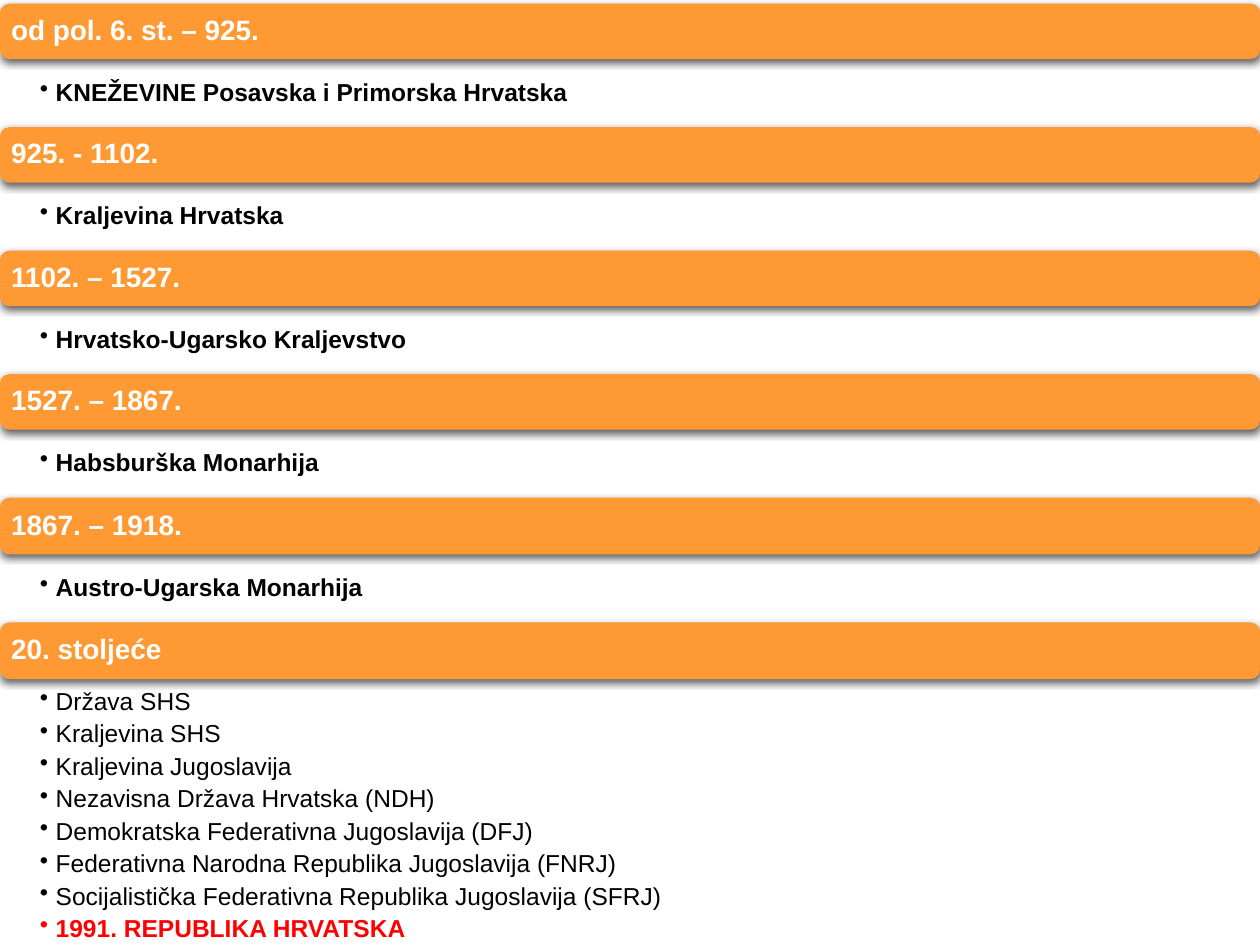
from lxml import etree
from pptx import Presentation
from pptx.dml.color import RGBColor
from pptx.enum.shapes import MSO_SHAPE
from pptx.enum.text import MSO_ANCHOR, PP_ALIGN
from pptx.oxml import parse_xml
from pptx.oxml.ns import nsdecls, qn
from pptx.util import Pt

ROUNDED = MSO_SHAPE.ROUNDED_RECTANGLE
MIDDLE = MSO_ANCHOR.MIDDLE
LEFT = PP_ALIGN.LEFT

ORANGE = RGBColor(0xFF, 0x99, 0x33)
WHITE = RGBColor(0xFF, 0xFF, 0xFF)
BLACK = RGBColor(0x00, 0x00, 0x00)
RED = RGBColor(0xFF, 0x00, 0x00)

WIDTH, HEIGHT = 720, 540
TOP = 2.16
DETAIL_HEIGHT = 38.88
CENTURY_HEIGHT = 149.04

SHADOW = (
    f'<a:effectLst {nsdecls("a")}>'
    '<a:outerShdw blurRad="57150" dist="19050" dir="5400000" algn="ctr" rotWithShape="0">'
    '<a:srgbClr val="000000"><a:alpha val="63000"/></a:srgbClr>'
    '</a:outerShdw></a:effectLst>'
)

# Bar height, period, state
PERIODS = [
    (31.68, "od pol. 6. st. – 925.", "KNEŽEVINE Posavska i Primorska Hrvatska"),
    (31.68, "925. - 1102.", "Kraljevina Hrvatska"),
    (31.68, "1102. – 1527.", "Hrvatsko-Ugarsko Kraljevstvo"),
    (31.68, "1527. – 1867.", "Habsburška Monarhija"),
    (32.4, "1867. – 1918.", "Austro-Ugarska Monarhija"),
]
CENTURY_BAR = 32.4
CENTURY_STATES = [
    "Država SHS",
    "Kraljevina SHS",
    "Kraljevina Jugoslavija",
    "Nezavisna Država Hrvatska (NDH)",
    "Demokratska Federativna Jugoslavija (DFJ)",
    "Federativna Narodna Republika Jugoslavija (FNRJ)",
    "Socijalistička Federativna Republika Jugoslavija (SFRJ)",
]


class Timeline:
    font = "Arial"
    bar_size = 16
    detail_size = 14

    def __init__(self, slide):
        self.slide = slide

    def frame(self, shape, left, top, right, bottom):
        frame = shape.text_frame
        frame.word_wrap = True
        frame.vertical_anchor = MIDDLE
        frame.margin_left, frame.margin_top = Pt(left), Pt(top)
        frame.margin_right, frame.margin_bottom = Pt(right), Pt(bottom)
        return frame

    def run(self, paragraph, text, size, color, bold, space_after):
        paragraph.alignment = LEFT
        paragraph.line_spacing = 0.9
        paragraph.space_after = Pt(space_after)
        run = paragraph.add_run()
        run.text = text
        run.font.name = self.font
        run.font.size = Pt(size)
        run.font.bold = bold
        run.font.color.rgb = color

    def bullet(self, paragraph):
        paragraph.level = 1
        properties = paragraph._p.get_or_add_pPr()
        properties.set("marL", str(Pt(9)))
        properties.set("indent", str(Pt(-9)))
        etree.SubElement(properties, qn("a:buChar")).set("char", "•")

    def bar(self, top, height, text):
        shape = self.slide.shapes.add_shape(ROUNDED, 0, Pt(top), Pt(WIDTH), Pt(height))
        shape.fill.solid()
        shape.fill.fore_color.rgb = ORANGE
        shape.line.fill.background()
        shape._element.spPr.append(parse_xml(SHADOW))
        frame = self.frame(shape, 4.8, 4.8, 4.8, 4.8)
        self.run(frame.paragraphs[0], text, self.bar_size, WHITE, True, 6.7)

    def details(self, top, height, items, bottom_inset=8.9):
        box = self.slide.shapes.add_textbox(0, Pt(top), Pt(WIDTH), Pt(height))
        frame = self.frame(box, 22.86, 8.9, 8.0, bottom_inset)
        for index, (text, color, bold) in enumerate(items):
            paragraph = frame.add_paragraph() if index else frame.paragraphs[0]
            self.bullet(paragraph)
            self.run(paragraph, text, self.detail_size, color, bold, 3.4)


def main():
    presentation = Presentation()
    presentation.slide_width, presentation.slide_height = Pt(WIDTH), Pt(HEIGHT)
    slide = presentation.slides.add_slide(presentation.slide_layouts[6])
    timeline = Timeline(slide)

    # Periods with one state each
    top = TOP
    for bar_height, period, state in PERIODS:
        timeline.bar(top, bar_height, period)
        timeline.details(top + bar_height, DETAIL_HEIGHT, [(state, BLACK, True)])
        top += bar_height + DETAIL_HEIGHT

    # 20th century
    timeline.bar(top, CENTURY_BAR, "20. stoljeće")
    states = [(state, BLACK, False) for state in CENTURY_STATES]
    states.append(("1991. REPUBLIKA HRVATSKA", RED, True))
    timeline.details(top + CENTURY_BAR, CENTURY_HEIGHT, states, bottom_inset=1.4)

    presentation.save("out.pptx")


if __name__ == "__main__":
    main()
